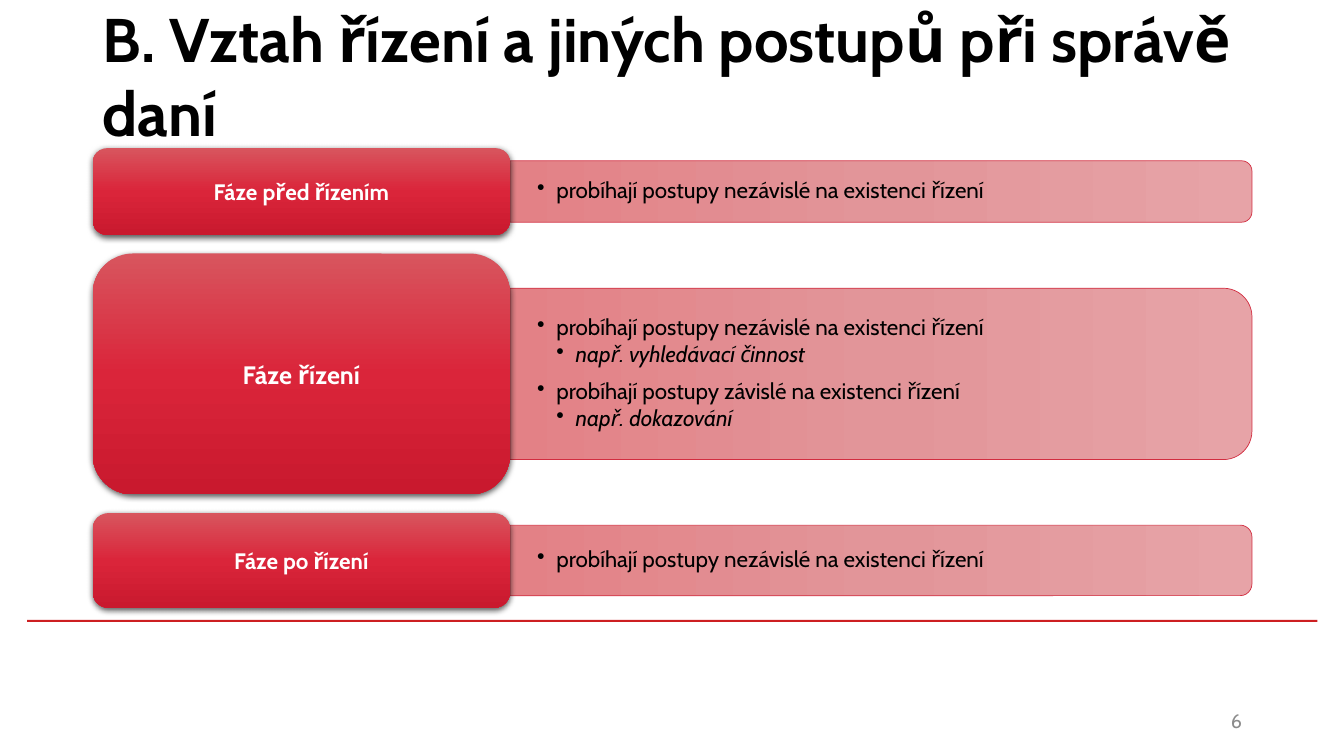
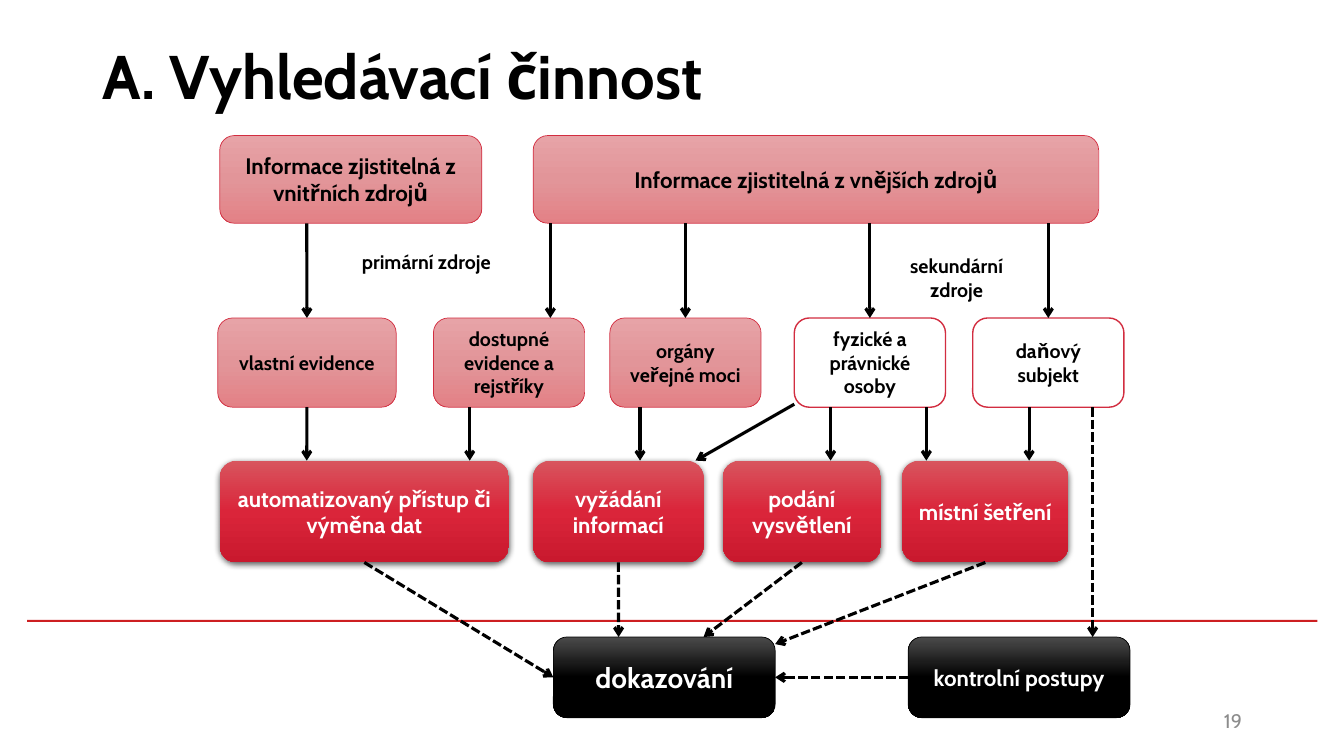
from pptx import Presentation
from pptx.dml.color import RGBColor
from pptx.enum.dml import MSO_LINE
from pptx.enum.shapes import MSO_CONNECTOR, MSO_SHAPE
from pptx.enum.text import MSO_ANCHOR, MSO_AUTO_SIZE, PP_ALIGN
from pptx.oxml import parse_xml
from pptx.oxml.ns import nsdecls, qn
from pptx.util import Inches, Pt

ROUND = MSO_SHAPE.ROUNDED_RECTANGLE
TAB = MSO_SHAPE.ROUND_2_SAME_RECTANGLE
RECT = MSO_SHAPE.RECTANGLE
LINE = MSO_CONNECTOR.STRAIGHT
DASH = MSO_LINE.SQUARE_DOT
LEFT, MID, RIGHT = PP_ALIGN.LEFT, PP_ALIGN.CENTER, PP_ALIGN.RIGHT
HIGH, CENTER = MSO_ANCHOR.TOP, MSO_ANCHOR.MIDDLE
FIXED = MSO_AUTO_SIZE.NONE

FONT = "Cabin"
COLS, ROWS = 40, 30
HUES = {"black": "000000", "white": "FFFFFF", "gray": "8C8C8C",
        "band": "CD1F21", "edge": "D22D40"}
KINDS = {
    "pink": {"fill": ("E7A3A7", "E29599", "E38186"), "edge": "edge",
             "width": 0.5, "ink": "black"},
    "red": {"fill": ("D8555E", "DA253A", "C9192E"), "edge": None,
            "ink": "white"},
    "dark": {"fill": ("4B4B4B", "000000", "000000"), "edge": "black",
             "width": 0.5, "ink": "white"},
    "plain": {"fill": None, "edge": "edge", "width": 1, "ink": "black"},
}


def tint(name):
    return RGBColor.from_string(HUES[name])


class Deck:
    def __init__(self):
        self.prs = Presentation()
        self.prs.slide_width = Inches(13.33)
        self.prs.slide_height = Inches(7.5)
        self.col = self.prs.slide_width / COLS
        self.row = self.prs.slide_height / ROWS
        self.shapes = None

    def area(self, x, y, w, h):
        return (int(x * self.col), int(y * self.row),
                int(w * self.col), int(h * self.row))

    def style(self, para, size, ink="black", bold=False, align=LEFT):
        para.alignment = align
        font = para.font
        font.name, font.size, font.bold = FONT, Pt(size), bold
        font.color.rgb = tint(ink)

    def start(self, title, number, width=34.5):
        slide = self.prs.slides.add_slide(self.prs.slide_layouts[5])
        self.shapes = slide.shapes
        head = self.shapes.title
        head.left, head.top, head.width, head.height = self.area(
            2.76, 0.08, width, 5.8)
        frame = head.text_frame
        frame.text = title
        frame.auto_size = FIXED
        frame.vertical_anchor = CENTER
        self.style(frame.paragraphs[0], 44, bold=True)
        band = self.shapes.add_shape(RECT, *self.area(0.81, 24.6, 38.4, 0.08))
        band.shadow.inherit = False
        band.fill.solid()
        band.fill.fore_color.rgb = tint("band")
        band.line.fill.background()
        self.note(str(number), (28.26, 27.8, 9, 1.6), ink="gray",
                  align=RIGHT, anchor=CENTER)

    def note(self, text, area, ink="black", bold=False, align=MID, anchor=HIGH):
        frame = self.shapes.add_textbox(*self.area(*area)).text_frame
        frame.word_wrap = True
        frame.vertical_anchor = anchor
        frame.text = text
        self.style(frame.paragraphs[0], 14, ink, bold, align)

    def paint(self, shape, kind):
        look = KINDS[kind]
        shape.shadow.inherit = False
        props = shape.element.spPr
        if look["fill"]:
            stops = "".join(
                f'<a:gs pos="{i * 50000}"><a:srgbClr val="{hue}"/></a:gs>'
                for i, hue in enumerate(look["fill"]))
            props.find(qn("a:prstGeom")).addnext(parse_xml(
                f'<a:gradFill {nsdecls("a")} rotWithShape="1"><a:gsLst>{stops}'
                '</a:gsLst><a:lin ang="5400000" scaled="0"/></a:gradFill>'))
        else:
            shape.fill.solid()
            shape.fill.fore_color.rgb = tint("white")
        if look["edge"]:
            shape.line.color.rgb = tint(look["edge"])
            shape.line.width = Pt(look["width"])
        else:
            shape.line.fill.background()
            props.find(qn("a:effectLst")).append(parse_xml(
                f'<a:outerShdw {nsdecls("a")} blurRad="57150" dist="19050" '
                'dir="5400000" algn="ctr" rotWithShape="0">'
                '<a:srgbClr val="000000"><a:alpha val="63000"/></a:srgbClr>'
                '</a:outerShdw>'))

    def box(self, text, area, kind, size=16):
        shape = self.shapes.add_shape(ROUND, *self.area(*area))
        self.paint(shape, kind)
        frame = shape.text_frame
        frame.word_wrap = True
        frame.vertical_anchor = CENTER
        frame.text = text
        self.style(frame.paragraphs[0], size, KINDS[kind]["ink"], True, MID)
        return shape

    def bar(self, items, area):
        x, y, w, h = self.area(*area)
        shape = self.shapes.add_shape(
            TAB, x + (w - h) // 2, y + (h - w) // 2, h, w)
        shape.rotation = 90
        self.paint(shape, "pink")
        frame = self.shapes.add_textbox(x, y, w, h).text_frame
        frame.word_wrap = True
        frame.vertical_anchor = CENTER
        frame.margin_left = frame.margin_right = Inches(0.27)
        frame.margin_top = frame.margin_bottom = Inches(0.14)
        for i, (level, text) in enumerate(items):
            para = frame.add_paragraph() if i else frame.paragraphs[0]
            para.text = text
            para.line_spacing = 0.9
            para.space_after = Pt(2.4)
            if i and level == 1:
                para.space_before = Pt(6.4)
            props = para._p.get_or_add_pPr()
            props.set("marL", str(Inches(0.19 * level)))
            props.set("indent", str(Inches(-0.19)))
            props.append(parse_xml(f'<a:buChar {nsdecls("a")} char="•"/>'))
            self.style(para, 16)
            para.font.italic = level == 2

    def arrow(self, start, stop, dash=False):
        line = self.shapes.add_connector(LINE, 0, 0, 0, 0)
        if isinstance(start[0], (int, float)):
            line.begin_x, line.begin_y = self.area(*start, 0, 0)[:2]
        else:
            line.begin_connect(*start)
        if isinstance(stop[0], (int, float)):
            line.end_x, line.end_y = self.area(*stop, 0, 0)[:2]
        else:
            line.end_connect(*stop)
        line.line.color.rgb = tint("black")
        line.line.width = Pt(2.25)
        if dash:
            line.line.dash_style = DASH
        props = line.element.spPr
        props.find(qn("a:ln")).append(
            parse_xml(f'<a:tailEnd {nsdecls("a")} type="arrow"/>'))
        props.append(parse_xml(f'<a:effectLst {nsdecls("a")}/>'))


def phases(deck):
    deck.start("B. Vztah řízení a jiných postupů při správě daní", 6, 36.12)
    free = (1, "probíhají postupy nezávislé na existenci řízení")
    steps = [
        ("Fáze před řízením", 3.44, 2.44, 16, [free]),
        ("Fáze řízení", 9.56, 6.8, 18, [
            free, (2, "např. vyhledávací činnost"),
            (1, "probíhají postupy závislé na existenci řízení"),
            (2, "např. dokazování")]),
        ("Fáze po řízení", 3.76, 2.8, 16, [free]),
    ]
    left, wide, top, gap = 2.76, 12.42, 5.88, 0.74
    for name, tall, slim, size, items in steps:
        deck.bar(items, (left + wide, top + (tall - slim) / 2, 22.08, slim))
        deck.box(name, (left, top, wide, tall), "red", size)
        top += tall + gap


def search(deck):
    deck.start("A. Vyhledávací činnost", 19)

    def tier(top, tall, kind, size, *cells):
        return [deck.box(text, (x, top, wide, tall), kind, size)
                for text, x, wide in cells]

    first, second, third, last = 5.38, 12.62, 18.28, 25.28
    under, below = 8.86, 16.16
    tier(first, under - first, "pink", 16,
         ("Informace zjistitelná z vnitřních zdrojů", 6.54, 7.8),
         ("Informace zjistitelná z vnějších zdrojů", 15.87, 16.83))
    own, _, public = tier(
        second, below - second, "pink", 14,
        ("vlastní evidence", 6.48, 5.31),
        ("dostupné evidence a rejstříky", 12.9, 4.5),
        ("orgány veřejné moci", 18.15, 4.5))
    people, payer = tier(
        second, below - second, "plain", 14,
        ("fyzické a právnické osoby", 23.64, 4.5),
        ("daňový subjekt", 28.95, 4.5))
    data, ask, tell, visit = tier(
        third, 4.04, "red", 16,
        ("automatizovaný přístup či výměna dat", 6.54, 8.61),
        ("vyžádání informací", 15.87, 5.07),
        ("podání vysvětlení", 21.51, 4.71),
        ("místní šetření", 26.85, 4.95))
    proof, = tier(last, 3.2, "dark", 20, ("dokazování", 16.47, 6.6))
    check, = tier(last, 3.2, "dark", 16, ("kontrolní postupy", 27.03, 6.6))

    deck.note("primární zdroje", (10.44, 9.72, 4.5, 2.28), bold=True)
    deck.note("sekundární zdroje", (26.22, 9.88, 4.5, 2.28), bold=True)

    for x, goal in ((9.13, own), (20.4, public), (25.89, people), (31.2, payer)):
        deck.arrow((x, under), (goal, 0))
    deck.arrow((16.38, under), (16.38, second))
    deck.arrow((own, 2), (9.13, third))
    for x in (13.98, 19.05, 24.72, 27.57, 30.63):
        deck.arrow((x, below), (x, third))
    deck.arrow((23.64, 16.04), (20.7, third))

    for start, stop in (
            ((data, 2), (proof, 1)),
            ((ask, 2), (18.41, last)),
            ((tell, 2), (20.94, last)),
            ((visit, 2), (23.07, 25.56)),
            ((check, 1), (proof, 3)),
            ((32.52, below), (32.52, last))):
        deck.arrow(start, stop, True)


def main():
    deck = Deck()
    phases(deck)
    search(deck)
    deck.prs.save("out.pptx")


if __name__ == "__main__":
    main()
